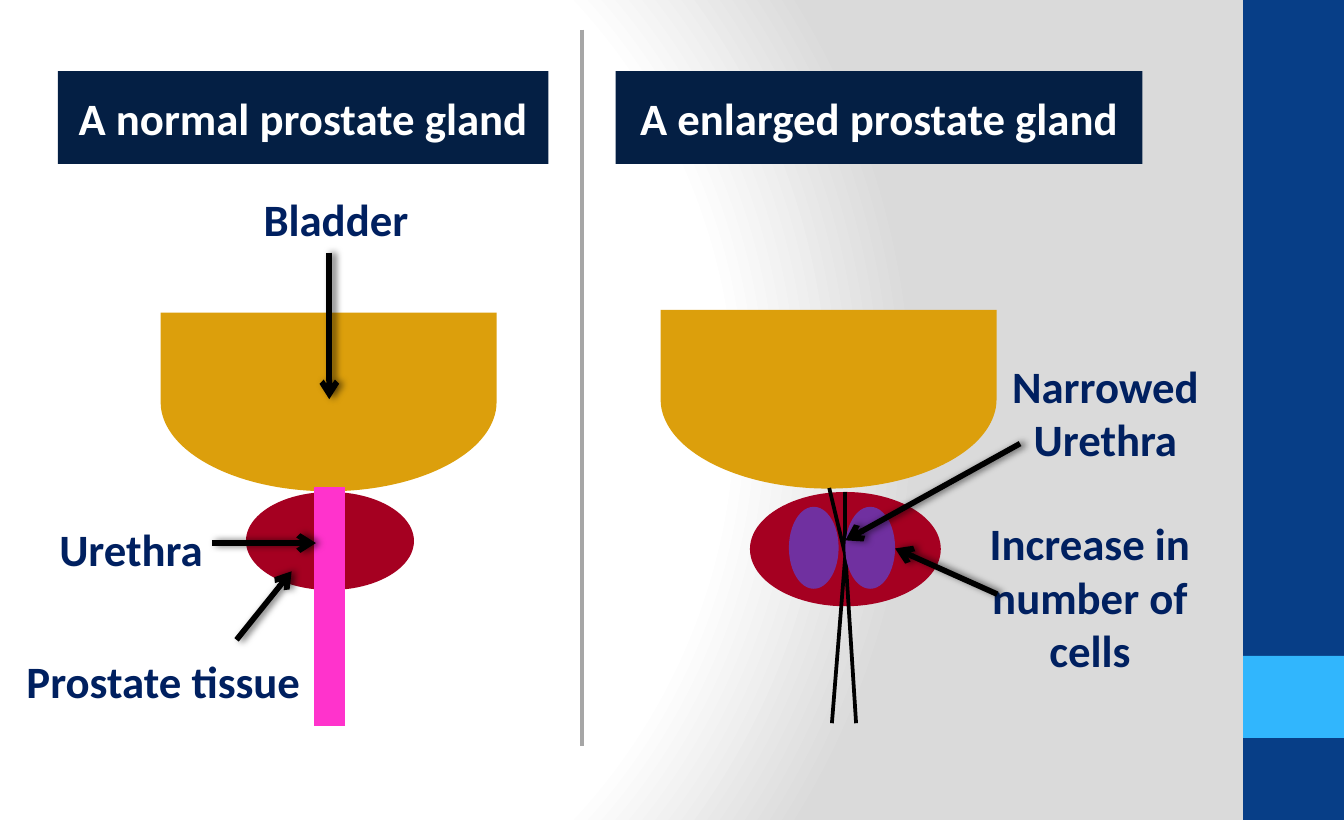
import dataclasses

import pptx
import pptx.dml.color
import pptx.enum.shapes
import pptx.enum.text
import pptx.oxml
import pptx.oxml.ns
import pptx.util

Inches = pptx.util.Inches
Shapes = pptx.enum.shapes.MSO_SHAPE
NAMESPACE = pptx.oxml.ns.nsdecls("a")


@dataclasses.dataclass(frozen=True)
class Theme:
    font: str = "Calibri"
    text_size: int = 24
    thin_line: int = 2
    arrow_line: int = 3
    white: str = "FFFFFF"
    page_edge: str = "DADADA"
    side_band: str = "073E87"
    side_accent: str = "31B6FD"
    heading: str = "041F44"
    label: str = "002060"
    bladder: str = "DC9F0C"
    prostate: str = "A50021"
    urethra: str = "FF33CC"
    cells: str = "7030A0"
    black: str = "000000"
    divider: str = "A6A6A6"


class SlideBuilder:
    """Draw the elements of a page in one theme."""

    def __init__(self, page, theme):
        self.page = page
        self.theme = theme

    def background(self):
        self.page.background.fill.gradient()
        gradient = self.page._element.find(".//" + pptx.oxml.ns.qn("a:gradFill"))
        stops = ((0, self.theme.white), (75, self.theme.white), (100, self.theme.page_edge))
        stop_xml = "".join(
            f'<a:gs pos="{percent * 1000}"><a:srgbClr val="{color}"/></a:gs>'
            for percent, color in stops
        )
        gradient.getparent().replace(gradient, pptx.oxml.parse_xml(
            f'<a:gradFill {NAMESPACE} rotWithShape="1"><a:gsLst>{stop_xml}</a:gsLst>'
            '<a:path path="circle"><a:fillToRect l="20000" t="50000" r="100000" b="50000"/>'
            '</a:path></a:gradFill>'
        ))

    def shape(self, kind, left, top, width, height, color, rotation=0):
        shape = self.page.shapes.add_shape(
            kind, Inches(left), Inches(top), Inches(width), Inches(height))
        shape.shadow.inherit = False
        shape.fill.solid()
        shape.fill.fore_color.rgb = pptx.dml.color.RGBColor.from_string(color)
        shape.line.fill.background()
        shape.rotation = rotation
        return shape

    def set_text(self, box, text, color):
        frame = box.text_frame
        frame.word_wrap = True
        frame.vertical_anchor = pptx.enum.text.MSO_ANCHOR.MIDDLE
        para = frame.paragraphs[0]
        para.text = text
        para.alignment = pptx.enum.text.PP_ALIGN.CENTER
        para.font.name = self.theme.font
        para.font.size = pptx.util.Pt(self.theme.text_size)
        para.font.bold = True
        para.font.color.rgb = pptx.dml.color.RGBColor.from_string(color)

    def heading(self, text, left, width):
        box = self.shape(Shapes.RECTANGLE, left, 0.53, width, 0.69, self.theme.heading)
        self.set_text(box, text, self.theme.white)

    def label(self, text, left, top, width, height):
        box = self.page.shapes.add_textbox(
            Inches(left), Inches(top), Inches(width), Inches(height))
        self.set_text(box, text, self.theme.label)

    def line(self, start, end, color, width, effect=""):
        line = self.page.shapes.add_connector(
            pptx.enum.shapes.MSO_CONNECTOR.STRAIGHT, *map(Inches, start + end))
        line.line.color.rgb = pptx.dml.color.RGBColor.from_string(color)
        line.line.width = pptx.util.Pt(width)
        line._element.spPr.append(pptx.oxml.parse_xml(
            f"<a:effectLst {NAMESPACE}>{effect}</a:effectLst>"))
        return line

    def arrow(self, start, end):
        point = pptx.util.Pt(1)
        shadow = (
            f'<a:outerShdw blurRad="{4 * point}" dist="{2 * point}" dir="0">'
            f'<a:srgbClr val="{self.theme.black}"><a:alpha val="60000"/></a:srgbClr>'
            '</a:outerShdw>'
        )
        arrow = self.line(start, end, self.theme.black, self.theme.arrow_line, shadow)
        arrow.line._get_or_add_ln().append(
            pptx.oxml.parse_xml(f'<a:tailEnd {NAMESPACE} type="arrow"/>'))


def main():
    theme = Theme()
    deck = pptx.Presentation()
    deck.slide_width, deck.slide_height = Inches(10), Inches(6.1)
    builder = SlideBuilder(deck.slides.add_slide(deck.slide_layouts[6]), theme)
    builder.background()

    builder.shape(Shapes.RECTANGLE, 9.25, 0, 0.75, 6.1, theme.side_band)
    builder.shape(Shapes.RECTANGLE, 9.25, 4.88, 0.75, 0.61, theme.side_accent)

    builder.shape(Shapes.OVAL, 1.83, 3.66, 1.25, 0.73, theme.prostate)
    builder.shape(Shapes.OVAL, 5.58, 3.66, 1.42, 0.85, theme.prostate)
    builder.heading("A normal prostate gland", 0.43, 3.65)
    builder.heading("A enlarged prostate gland", 4.58, 3.92)
    for left, top in ((1.78, 1.74), (5.5, 1.72)):
        builder.shape(Shapes.FLOWCHART_DELAY, left, top, 1.33, 2.5, theme.bladder, 90)
    builder.shape(Shapes.MATH_MINUS, 1.24, 4.01, 2.42, 1, theme.urethra, 90)

    narrowing = (6.29, 4.13)
    for opening in ((6.17, 3.63), (6.29, 3.66)):
        builder.line(opening, narrowing, theme.black, theme.thin_line)
    for outlet in ((6.19, 5.38), (6.37, 5.38)):
        builder.line(narrowing, outlet, theme.black, theme.thin_line)
    for left in (5.87, 6.29):
        builder.shape(Shapes.OVAL, left, 3.77, 0.37, 0.61, theme.cells)

    callouts = (
        ("Bladder", (1.5, 1.38, 2, 0.5), (2.45, 1.88), (2.45, 2.97)),
        ("Urethra", (0.19, 3.83, 1.57, 0.5), (1.58, 4.04), (2.35, 4.04)),
        ("Prostate tissue", (-0.03, 4.81, 2.49, 0.5), (1.76, 4.76), (2.17, 4.25)),
        ("Narrowed Urethra", (7.41, 2.72, 1.63, 0.69), (7.59, 3.3), (6.29, 4.02)),
        ("Increase in number of cells", (7.18, 3.86, 1.86, 1.15), (7.42, 4.42), (6.66, 4.08)),
    )
    for text, area, start, end in callouts:
        builder.label(text, *area)
        builder.arrow(start, end)
    builder.line((4.33, 0.22), (4.33, 5.55), theme.divider, theme.thin_line)

    deck.save("out.pptx")


if __name__ == "__main__":
    main()
